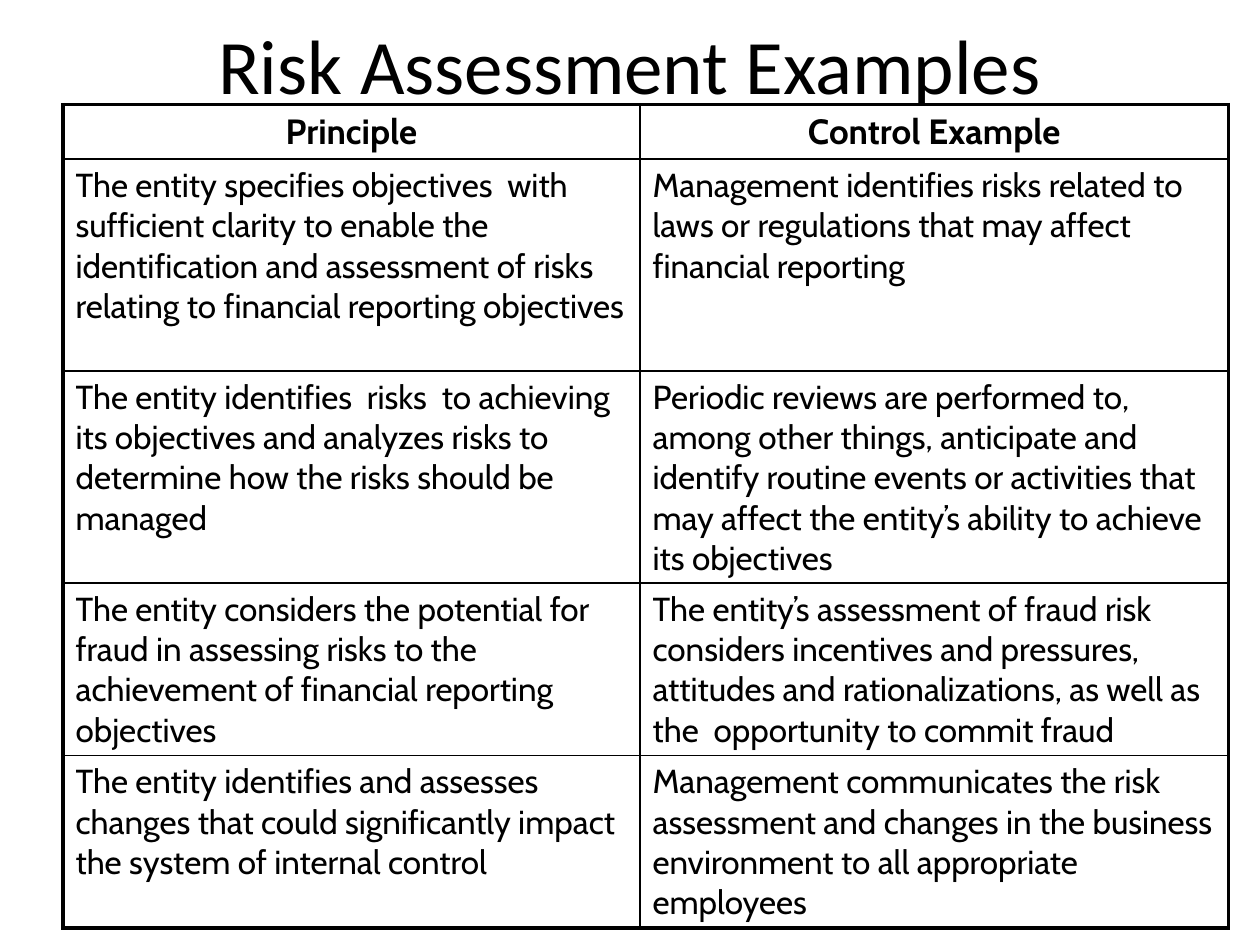
import pptx
import pptx.util
import pptx.dml.color
import pptx.enum.text
import pptx.oxml

BLACK = pptx.dml.color.RGBColor(0x00, 0x00, 0x00)
WHITE = pptx.dml.color.RGBColor(0xFF, 0xFF, 0xFF)
CENTER = pptx.enum.text.PP_ALIGN.CENTER
LEFT = pptx.enum.text.PP_ALIGN.LEFT
MIDDLE = pptx.enum.text.MSO_ANCHOR.MIDDLE
Inches = pptx.util.Inches
Pt = pptx.util.Pt

TITLE = "Risk Assessment Examples"
ROWS = [
    ("Principle", "Control Example"),
    ("The entity specifies objectives  with sufficient clarity to enable the identification and assessment of risks relating to financial reporting objectives",
     "Management identifies risks related to laws or regulations that may affect financial reporting"),
    ("The entity identifies  risks  to achieving its objectives and analyzes risks to determine how the risks should be managed",
     "Periodic reviews are performed to, among other things, anticipate and identify routine events or activities that may affect the entity’s ability to achieve its objectives"),
    ("The entity considers the potential for fraud in assessing risks to the achievement of financial reporting  objectives",
     "The entity’s assessment of fraud risk considers incentives and pressures, attitudes and rationalizations, as well as the  opportunity to commit fraud"),
    ("The entity identifies and assesses changes that could significantly impact the system of internal control",
     "Management communicates the risk assessment and changes in the business environment to all appropriate employees"),
]
COLUMN_WIDTHS = [4.58, 4.67]
ROW_HEIGHTS = [0.43, 1.68, 1.68, 1.37, 1.37]
MARGIN = 0.5
TABLE_TOP = 0.83
OUTER_LINE, INNER_LINE = 2.25, 1

TITLE_FONT = {"name": "Calibri", "size": Pt(44), "bold": False}
HEADER_FONT = {"name": "Cabin", "size": Pt(20), "bold": True}
BODY_FONT = {"name": "Cabin", "size": Pt(19), "bold": False}


def write_text(text_frame, text, font_format, alignment):
    paragraph = text_frame.paragraphs[0]
    paragraph.alignment = alignment
    run = paragraph.add_run()
    run.text = text
    for name, value in font_format.items():
        setattr(run.font, name, value)
    run.font.color.rgb = BLACK


def add_borders(cell, outer_sides):
    properties = cell._tc.get_or_add_tcPr()
    for position, (side, is_outer) in enumerate(outer_sides.items()):
        width = Pt(OUTER_LINE if is_outer else INNER_LINE)
        border = pptx.oxml.parse_xml(
            f'<a:{side} xmlns:a="http://schemas.openxmlformats.org/drawingml/2006/main" w="{width}">'
            f'<a:solidFill><a:srgbClr val="{BLACK}"/></a:solidFill></a:{side}>'
        )
        properties.insert(position, border)


def add_title(slide, slide_width):
    title = slide.shapes.add_textbox(
        Inches(MARGIN), Inches(-0.25), slide_width - 2 * Inches(MARGIN), Inches(1.51))
    title.text_frame.word_wrap = True
    title.text_frame.vertical_anchor = MIDDLE
    write_text(title.text_frame, TITLE, TITLE_FONT, CENTER)


def add_principles_table(slide):
    table = slide.shapes.add_table(
        len(ROWS), len(COLUMN_WIDTHS), Inches(MARGIN), Inches(TABLE_TOP),
        Inches(sum(COLUMN_WIDTHS)), Inches(sum(ROW_HEIGHTS))).table
    table.horz_banding = False
    for column, width in zip(table.columns, COLUMN_WIDTHS):
        column.width = Inches(width)
    for row, height in zip(table.rows, ROW_HEIGHTS):
        row.height = Inches(height)
    for row_index, texts in enumerate(ROWS):
        is_header = row_index == 0
        for column_index, text in enumerate(texts):
            cell = table.cell(row_index, column_index)
            cell.fill.solid()
            cell.fill.fore_color.rgb = WHITE
            write_text(cell.text_frame, text,
                       HEADER_FONT if is_header else BODY_FONT,
                       CENTER if is_header else LEFT)
            add_borders(cell, {
                "lnL": column_index == 0,
                "lnR": column_index == len(texts) - 1,
                "lnT": is_header,
                "lnB": row_index == len(ROWS) - 1,
            })


def main():
    presentation = pptx.Presentation()
    presentation.slide_width = Inches(10)
    presentation.slide_height = Inches(7.5)
    slide = presentation.slides.add_slide(presentation.slide_layouts[6])
    add_title(slide, presentation.slide_width)
    add_principles_table(slide)
    presentation.save("out.pptx")


if __name__ == "__main__":
    main()
